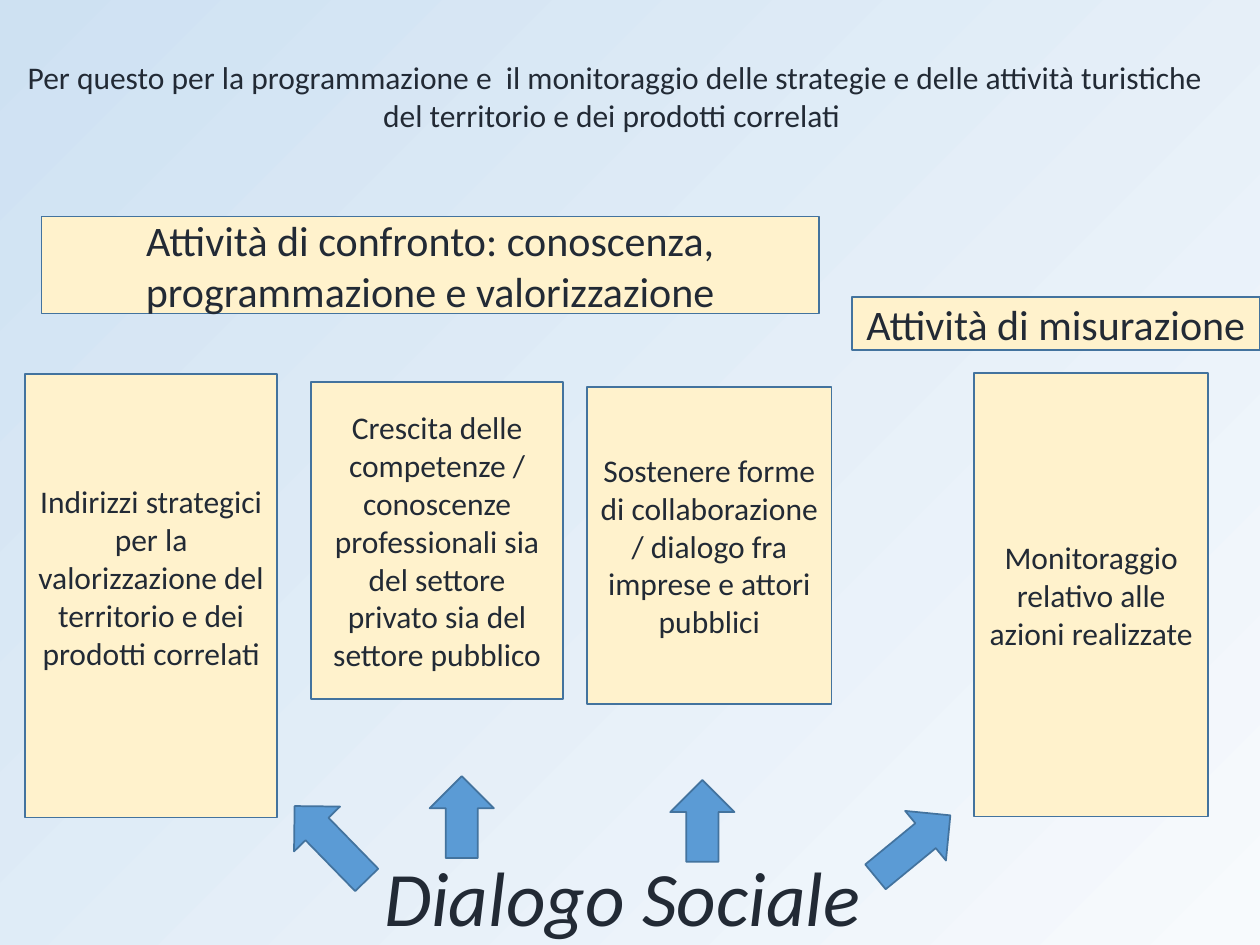
"""Build the slide on social dialogue in tourism planning."""
from dataclasses import dataclass
from typing import Any, Optional

from pptx import Presentation
from pptx.dml.color import RGBColor
from pptx.enum.shapes import MSO_SHAPE
from pptx.enum.text import MSO_ANCHOR, MSO_AUTO_SIZE, PP_ALIGN
from pptx.util import Pt

CREAM = RGBColor(0xFF, 0xF2, 0xCC)
BLUE = RGBColor(0x5B, 0x9B, 0xD5)
OUTLINE = RGBColor(0x43, 0x73, 0x9E)
INK = RGBColor(0x22, 0x2A, 0x35)
PALE = RGBColor(0xF7, 0xFA, 0xFD)
SKY = RGBColor(0xCE, 0xE1, 0xF2)


@dataclass(frozen=True)
class Box:
    left: float
    top: float
    width: float
    height: float
    text: str
    size: float = 18
    italic: bool = False
    fill: Optional[RGBColor] = CREAM
    bottom_inset: float = 3.6


@dataclass(frozen=True)
class Arrow:
    left: float
    top: float
    height: float
    rotation: float = 0
    width: float = 36.7


TITLE = Box(
    -3.6, 29.5, 706.3, 51.1,
    " Per questo per la programmazione e  il monitoraggio delle strategie "
    "e delle attività turistiche del territorio e dei prodotti correlati",
)
BOXES = [
    Box(14.4, 213.8, 144, 253.4,
        "Indirizzi strategici per la valorizzazione del territorio e dei prodotti correlati",
        bottom_inset=25.2),
    Box(556.6, 213.1, 133.9, 253.4, "Monitoraggio relativo alle azioni realizzate"),
    Box(335.5, 221, 139.7, 181.4,
        "Sostenere forme di collaborazione / dialogo fra imprese e attori pubblici"),
    Box(177.8, 218.2, 144, 181.4,
        "Crescita delle competenze / conoscenze professionali sia del settore "
        "privato sia del settore pubblico"),
    Box(28.1, 481.7, 655.2, 60.5, "Dialogo Sociale", size=44, italic=True, fill=None),
    Box(23.8, 123.8, 444.2, 55.4,
        "Attività di confronto: conoscenza, programmazione e valorizzazione", size=24),
    Box(486.7, 169.9, 233.3, 30.2, "Attività di misurazione", size=24),
]
ARROWS = [
    Arrow(170.6, 452.2, 59, 315.7),
    Arrow(245.5, 443.5, 46.8),
    Arrow(383, 445.7, 46.8),
    Arrow(503.3, 455.8, 55.4, 50.6),
]


def apply_format(target: Any, values: dict[str, Any]) -> None:
    for name, value in values.items():
        setattr(target, name, value)


def write_text(shape: Any, box: Box, anchor: MSO_ANCHOR) -> None:
    frame = shape.text_frame
    apply_format(frame, {
        "word_wrap": True,
        "auto_size": MSO_AUTO_SIZE.NONE,
        "vertical_anchor": anchor,
        "margin_bottom": Pt(box.bottom_inset),
    })
    paragraph = frame.paragraphs[0]
    paragraph.alignment = PP_ALIGN.CENTER
    run = paragraph.add_run()
    run.text = box.text
    apply_format(run.font, {"name": "Calibri", "size": Pt(box.size), "italic": box.italic})
    run.font.color.rgb = INK


def add_filled_shape(slide: Any, kind: MSO_SHAPE, item: Any, fill: Optional[RGBColor]) -> Any:
    shape = slide.shapes.add_shape(
        kind, Pt(item.left), Pt(item.top), Pt(item.width), Pt(item.height))
    shape.shadow.inherit = False
    if fill is None:
        shape.fill.background()
        shape.line.fill.background()
    else:
        shape.fill.solid()
        shape.fill.fore_color.rgb = fill
        shape.line.color.rgb = OUTLINE
        shape.line.width = Pt(1)
    return shape


def add_box(slide: Any, box: Box) -> None:
    shape = add_filled_shape(slide, MSO_SHAPE.FLOWCHART_PROCESS, box, box.fill)
    write_text(shape, box, MSO_ANCHOR.MIDDLE)


def add_arrow(slide: Any, arrow: Arrow) -> None:
    shape = add_filled_shape(slide, MSO_SHAPE.UP_ARROW, arrow, BLUE)
    shape.rotation = arrow.rotation


def set_background(slide: Any) -> None:
    fill = slide.background.fill
    fill.gradient()
    fill.gradient_angle = 135
    for stop, color, position in zip(fill.gradient_stops, (PALE, SKY), (0, 1)):
        stop.color.rgb = color
        stop.position = position


def main() -> None:
    presentation = Presentation()
    apply_format(presentation, {"slide_width": Pt(720), "slide_height": Pt(540)})
    slide = presentation.slides.add_slide(presentation.slide_layouts[5])
    set_background(slide)
    title = slide.shapes.title
    apply_format(title, {
        name: Pt(getattr(TITLE, name)) for name in ("left", "top", "width", "height")
    })
    write_text(title, TITLE, MSO_ANCHOR.TOP)
    for box in BOXES:
        add_box(slide, box)
    for arrow in ARROWS:
        add_arrow(slide, arrow)
    presentation.save("out.pptx")


if __name__ == "__main__":
    main()
